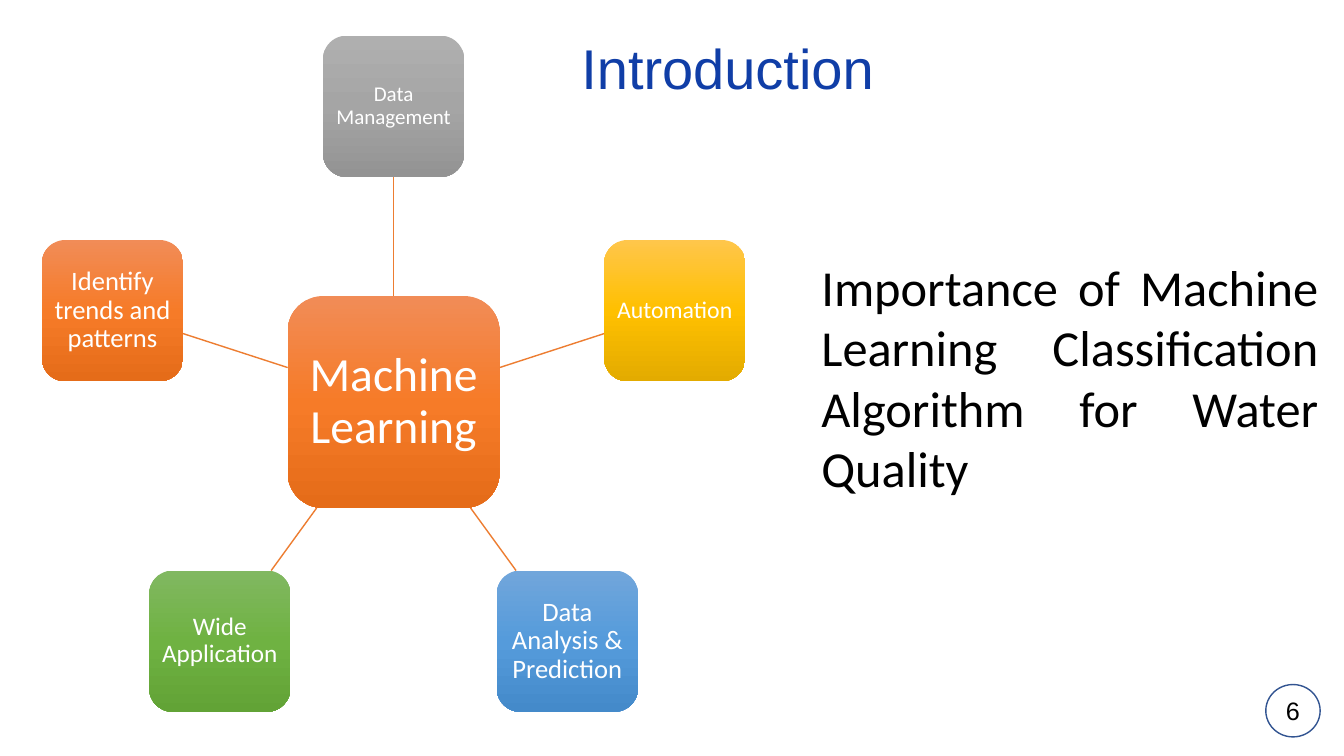
import copy
import math

import pptx
import pptx.dml.color
import pptx.enum.shapes
import pptx.enum.text
import pptx.oxml.ns
import pptx.oxml.xmlchemy
import pptx.util
from lxml import etree
from pptx.util import Cm

TITLE = "Introduction"
BODY = "Importance of Machine Learning Classification Algorithm for Water Quality"
PAGE = "6"
HUB = ("Machine Learning", 34, "orange")
TOPICS = [
    ("Data Management", 15, "grey"),
    ("Automation", 17, "gold"),
    ("Data Analysis & Prediction", 19, "blue"),
    ("Wide Application", 18, "green"),
    ("Identify trends and patterns", 19, "orange"),
]
COLORS = {
    "orange_top": "F18C57", "orange_mid": "F67B28", "orange_low": "E56C19",
    "grey_top": "AFAFAF", "grey_mid": "A5A5A5", "grey_low": "939393",
    "gold_top": "FFC64B", "gold_mid": "FFC000", "gold_low": "E3AB00",
    "blue_top": "71A6DB", "blue_mid": "559BDB", "blue_low": "448ACA",
    "green_top": "81B861", "green_mid": "6FB242", "green_low": "62A336",
    "spoke": "ED7D31", "title": "103EA7", "ring": "325491",
    "white": "FFFFFF", "black": "000000",
}
CENTER_X, CENTER_Y, RADIUS = 9.92, 10.13, 7.45
HUB_SIZE, TOPIC_SIZE = 5.34, 3.56

SHAPE = pptx.enum.shapes.MSO_SHAPE
ALIGN = pptx.enum.text.PP_ALIGN
ANCHOR = pptx.enum.text.MSO_ANCHOR


def rgb(name):
    return pptx.dml.color.RGBColor.from_string(COLORS[name])


def write(s, text, size, color, font, align=ALIGN.CENTER, anchor=ANCHOR.MIDDLE,
          inset=0.1, spacing=None):
    tf = s.text_frame
    tf.word_wrap = True
    tf.vertical_anchor = anchor
    tf.margin_left = tf.margin_right = tf.margin_top = tf.margin_bottom = Cm(inset)
    p = tf.paragraphs[0]
    p.alignment = align
    p.line_spacing = spacing
    r = p.add_run()
    r.text = text
    r.font.size = pptx.util.Pt(size)
    r.font.name = font
    r.font.color.rgb = rgb(color)


def add_box(sl, x, y, size, topic, inset):
    text, pt, tone = topic
    s = sl.shapes.add_shape(SHAPE.ROUNDED_RECTANGLE, Cm(x - size / 2),
                            Cm(y - size / 2), Cm(size), Cm(size))
    s.shadow.inherit = False
    s.line.fill.background()
    s.fill.gradient()
    s.fill.gradient_angle = 270
    stops = s._element.spPr.xpath(".//a:gsLst")[0]
    stops.insert(1, copy.deepcopy(stops[0]))
    shades = zip(s.fill.gradient_stops, ("top", "mid", "low"), (0, 0.5, 1))
    for stop, shade, position in shades:
        stop.color.rgb = rgb(f"{tone}_{shade}")
        stop.position = position
    write(s, text, pt, "white", "Calibri", inset=inset, spacing=0.9)
    return s


def add_spoke(sl, angle):
    dx, dy = math.cos(angle), math.sin(angle)
    reach = max(abs(dx), abs(dy))
    start = HUB_SIZE / 2 / reach
    end = RADIUS - TOPIC_SIZE / 2 / reach
    s = sl.shapes.add_connector(
        pptx.enum.shapes.MSO_CONNECTOR.STRAIGHT,
        Cm(CENTER_X + start * dx), Cm(CENTER_Y + start * dy),
        Cm(CENTER_X + end * dx), Cm(CENTER_Y + end * dy))
    s.line.color.rgb = rgb("spoke")
    s.line.width = pptx.util.Pt(1)
    etree.SubElement(s._element.spPr, pptx.oxml.ns.qn("a:effectLst"))
    return s


def main():
    prs = pptx.Presentation()
    prs.slide_width, prs.slide_height = Cm(33.87), Cm(19.05)
    sl = prs.slides.add_slide(prs.slide_layouts[6])

    s = sl.shapes.add_textbox(Cm(3.73), Cm(0.76), Cm(29.21), Cm(2.1))
    write(s, TITLE, 40, "title", "Arial", spacing=0.9)

    hub = add_box(sl, CENTER_X, CENTER_Y, HUB_SIZE, HUB, 0.23)
    for i, topic in enumerate(TOPICS):
        angle = math.radians(-90 + i * 360 / len(TOPICS))
        box = add_box(sl, CENTER_X + RADIUS * math.cos(angle),
                      CENTER_Y + RADIUS * math.sin(angle), TOPIC_SIZE, topic, 0.1)
        spoke = add_spoke(sl, angle)
        if i == 0:
            spoke.begin_connect(hub, 0)
            spoke.end_connect(box, 2)

    s = sl.shapes.add_textbox(Cm(20.45), Cm(6.2), Cm(13.03), Cm(6.4))
    write(s, BODY, 36, "black", "Calibri", ALIGN.JUSTIFY, ANCHOR.TOP, 0.25)

    s = sl.shapes.add_shape(SHAPE.OVAL, Cm(31.9), Cm(17.25), Cm(1.37), Cm(1.32))
    s.shadow.inherit = False
    s.fill.solid()
    s.fill.fore_color.rgb = rgb("white")
    s.line.color.rgb = rgb("ring")
    s.line.width = pptx.util.Pt(1)
    write(s, PAGE, 18, "black", "Arial", inset=0)

    prs.save("out.pptx")


if __name__ == "__main__":
    main()
